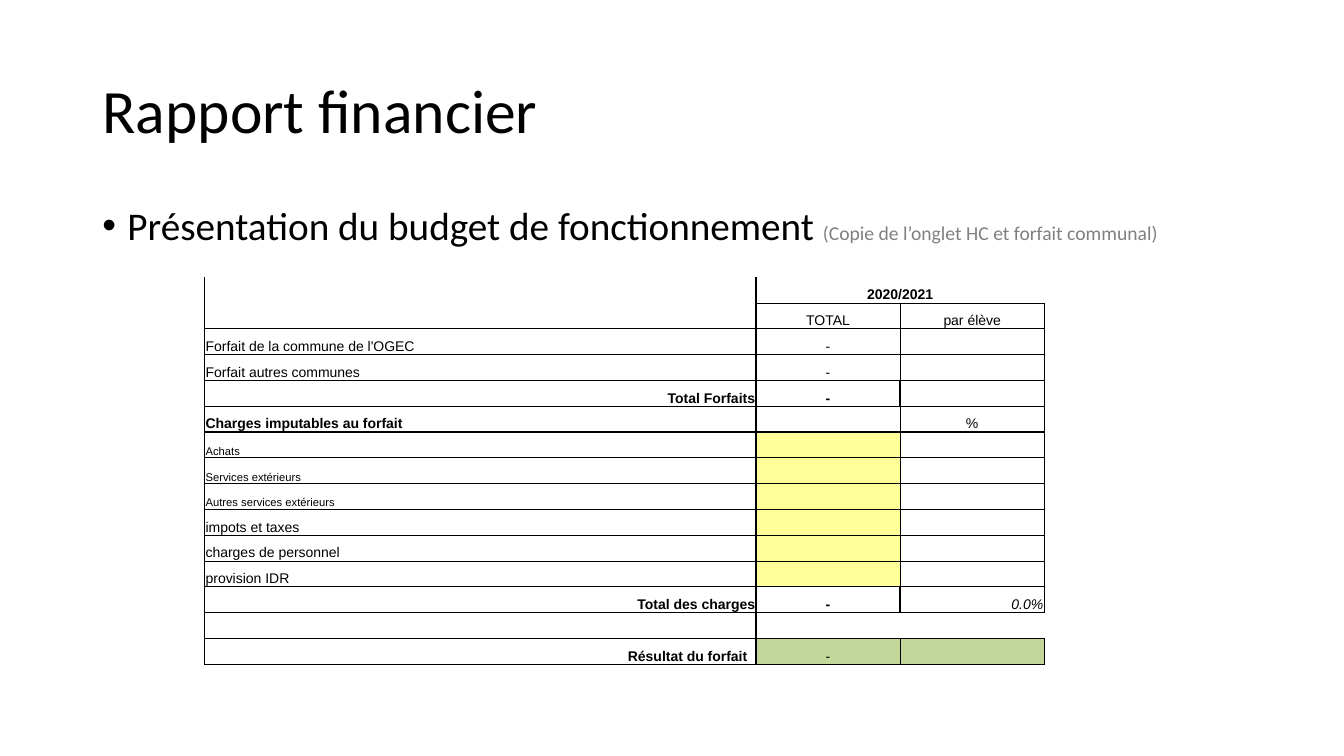
from dataclasses import dataclass

from lxml import etree
from pptx import Presentation
from pptx import util as u
from pptx.dml.color import RGBColor
from pptx.enum import text
from pptx.oxml import ns

BLACK = RGBColor(0x00, 0x00, 0x00)
GREY = RGBColor(0x80, 0x80, 0x80)
YELLOW = RGBColor(0xFF, 0xFF, 0x99)
GREEN = RGBColor(0xC4, 0xD7, 0x9B)

LEFT, CENTER, RIGHT = text.PP_ALIGN.LEFT, text.PP_ALIGN.CENTER, text.PP_ALIGN.RIGHT
THIN, THICK = 0.5, 1
COLUMN_WIDTHS = (298.8, 95.04, 102.96, 102.96)
CELL_INSET = 0.72


@dataclass
class BudgetRow:
    """One line of the budget, with its texts, fills and rule weights."""
    label: str = ""
    total: str = ""
    share: str = ""
    size: float = 10
    is_sum: bool = False
    total_bold: bool = False
    label_bold: bool = False
    total_fill: RGBColor = None
    share_fill: RGBColor = None
    label_inset: float = CELL_INSET
    share_align: int = CENTER
    share_italic: bool = False
    middle: float = THIN
    right: float = THICK
    below: tuple = (THIN, THIN)


SOLID = (THICK, THICK)
ROWS = (
    BudgetRow(total="2020/2021", total_bold=True, middle=0, right=0, below=(0, THIN)),
    BudgetRow(total="TOTAL", share="par élève", below=SOLID),
    BudgetRow("Forfait de la commune de l'OGEC", "-"),
    BudgetRow("Forfait autres communes", "-", below=(THIN, THICK)),
    BudgetRow("Total Forfaits", "-", is_sum=True, label_bold=True, total_bold=True,
              middle=THICK, below=SOLID),
    BudgetRow("Charges imputables au forfait", share="%", label_bold=True, below=SOLID),
    BudgetRow("Achats", size=8, total_fill=YELLOW),
    BudgetRow("Services extérieurs", size=8, total_fill=YELLOW),
    BudgetRow("Autres services extérieurs", size=8, total_fill=YELLOW),
    BudgetRow("impots et taxes", total_fill=YELLOW),
    BudgetRow("charges de personnel", total_fill=YELLOW),
    BudgetRow("provision IDR", total_fill=YELLOW, below=SOLID),
    BudgetRow("Total des charges", "-", "0.0%", is_sum=True, label_bold=True,
              total_bold=True, share_align=RIGHT, share_italic=True,
              middle=THICK, below=SOLID),
    BudgetRow(middle=0, right=0),
    BudgetRow("Résultat du forfait", "-", is_sum=True, label_bold=True,
              label_inset=6.3, total_fill=GREEN, share_fill=GREEN,
              right=THIN, below=SOLID),
)


def write(para, words, size, font="Calibri", color=BLACK, bold=False, italic=False,
          align=LEFT):
    """Add a formatted span to a paragraph."""
    para.alignment = align
    span = para.add_run()
    span.text = words
    span.font.name = font
    span.font.size = u.Pt(size)
    span.font.color.rgb = color
    span.font.bold = bold
    span.font.italic = italic


def add_title(page, left, top, width, height):
    """Place the slide title in the given box."""
    title = page.shapes.title
    title.left, title.top = u.Pt(left), u.Pt(top)
    title.width, title.height = u.Pt(width), u.Pt(height)
    title.text_frame.vertical_anchor = text.MSO_ANCHOR.MIDDLE
    para = title.text_frame.paragraphs[0]
    para.line_spacing = 0.9
    write(para, "Rapport financier", 44)


def add_subject(page, left, top, width, height):
    """Place the bulleted subject line in the given box."""
    box = page.shapes.add_textbox(u.Pt(left), u.Pt(top), u.Pt(width), u.Pt(height))
    box.text_frame.word_wrap = True
    para = box.text_frame.paragraphs[0]
    para.line_spacing = 0.9
    para.space_before = u.Pt(10)
    write(para, "Présentation du budget de fonctionnement ", 28)
    write(para, "(Copie de l’onglet HC et forfait communal)", 14, color=GREY)
    properties = para._p.get_or_add_pPr()
    properties.set("marL", str(u.Pt(18)))
    properties.set("indent", str(-u.Pt(18)))
    etree.SubElement(properties, ns.qn("a:buFont")).set("typeface", "Arial")
    etree.SubElement(properties, ns.qn("a:buChar")).set("char", "•")


def set_borders(cell, weights):
    """Rule the left, right, top and bottom edges; zero means no line."""
    properties = cell._tc.get_or_add_tcPr()
    for side, weight in zip("LRTB", weights):
        line = etree.SubElement(properties, ns.qn(f"a:ln{side}"))
        line.set("w", str(u.Pt(weight)))
        if weight:
            fill = etree.SubElement(line, ns.qn("a:solidFill"))
            etree.SubElement(fill, ns.qn("a:srgbClr")).set("val", str(BLACK))
        else:
            etree.SubElement(line, ns.qn("a:noFill"))


def fill_cell(cell, words, weights, color=None, inset=CELL_INSET, size=10, **style):
    """Give a cell its borders, fill and bottom-anchored text."""
    set_borders(cell, weights)
    if color is None:
        cell.fill.background()
    else:
        cell.fill.solid()
        cell.fill.fore_color.rgb = color
    cell.vertical_anchor = text.MSO_ANCHOR.BOTTOM
    cell.margin_left = cell.margin_top = u.Pt(CELL_INSET)
    cell.margin_right, cell.margin_bottom = u.Pt(inset), 0
    para = cell.text_frame.paragraphs[0]
    if words:
        write(para, words, size, font="Arial", **style)
    else:
        para._p.get_or_add_endParaRPr().set("sz", str(size * 100))


def add_budget(page, left, top, height):
    """Build the budget table, its rows sharing the height equally."""
    frame = page.shapes.add_table(len(ROWS), len(COLUMN_WIDTHS), u.Pt(left), u.Pt(top),
                                  u.Pt(sum(COLUMN_WIDTHS)), u.Pt(height))
    table = frame.table
    table.first_row = table.horz_banding = False
    for column, width in zip(table.columns, COLUMN_WIDTHS):
        column.width = u.Pt(width)
    above = (0, 0)
    for number, row in enumerate(ROWS):
        table.rows[number].height = u.Pt(height / len(ROWS))
        label, spacer, total, share = table.rows[number].cells
        label_edges = (above[0], row.below[0])
        value_edges = (above[1], row.below[1])
        fill_cell(label, row.label, (THICK, 0, *label_edges), inset=row.label_inset,
                  size=row.size, bold=row.label_bold)
        fill_cell(spacer, "", (0, THICK, *label_edges))
        if row.is_sum:
            label.merge(spacer)
            set_borders_after_merge = label.text_frame.paragraphs[0]
            set_borders_after_merge.alignment = RIGHT
        fill_cell(total, row.total, (THICK, row.middle, *value_edges),
                  color=row.total_fill, bold=row.total_bold, align=CENTER)
        fill_cell(share, row.share, (row.middle, row.right, *value_edges),
                  color=row.share_fill, italic=row.share_italic, align=row.share_align)
        above = row.below
    table.cell(0, 2).merge(table.cell(0, 3))


def main():
    """Build and save the deck."""
    deck = Presentation()
    deck.slide_width, deck.slide_height = u.Pt(960), u.Pt(540)
    page = deck.slides.add_slide(deck.slide_layouts[5])
    add_title(page, 66, 28.75, 828, 104.4)
    add_subject(page, 66, 143.75, 828, 342.6)
    add_budget(page, 146.16, 198, 276.75)
    deck.save("out.pptx")


if __name__ == "__main__":
    main()
